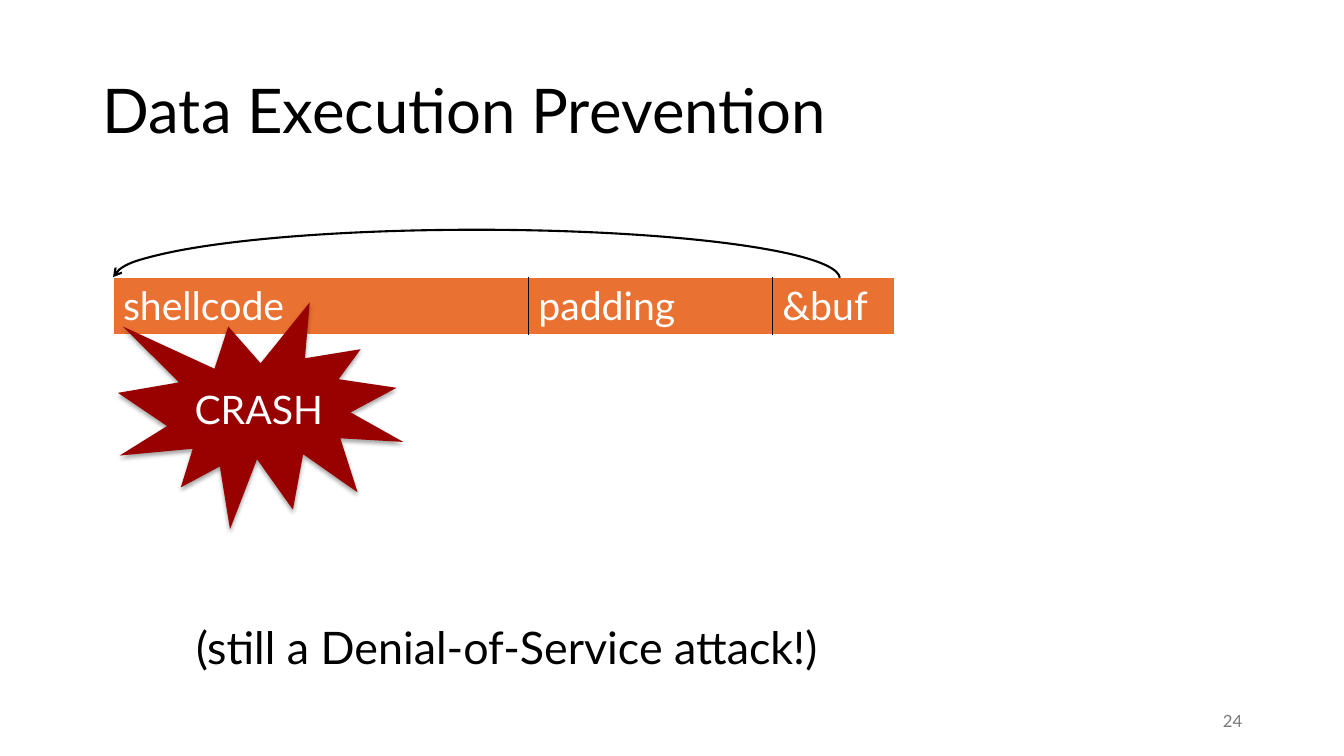
from dataclasses import dataclass

from lxml.etree import SubElement
from pptx import Presentation
from pptx.dml.color import RGBColor
from pptx.enum.shapes import MSO_SHAPE as Preset
from pptx.enum.text import MSO_ANCHOR as Anchor, PP_ALIGN as Align
from pptx.oxml import parse_xml
from pptx.oxml.ns import nsdecls, qn
from pptx.util import Inches, Pt


@dataclass(frozen=True)
class Theme:
    font: str = "Lato"
    ink: str = "000000"
    light: str = "FFFFFF"
    muted: str = "797979"
    buffer: str = "E97132"
    crash: str = "990000"
    title: int = 44
    note: int = 32
    label: int = 28
    number: int = 12


def apply_format(target, values):
    for name, value in values.items():
        setattr(target, name, value)


class SlideBuilder:
    def __init__(self, slide, theme):
        self.slide = slide
        self.theme = theme

    def fill_text(self, text_frame, text, size, color, **paragraph_format):
        paragraph = text_frame.paragraphs[0]
        apply_format(paragraph, paragraph_format)
        run = paragraph.add_run()
        run.text = text
        apply_format(run.font, {"name": self.theme.font, "size": Pt(size)})
        run.font.color.rgb = RGBColor.from_string(color)

    def text(self, box, text, size, color, frame_format, **paragraph_format):
        shape = self.slide.shapes.add_textbox(*map(Inches, box))
        apply_format(shape.text_frame, frame_format)
        self.fill_text(shape.text_frame, text, size, color, **paragraph_format)

    def buffer_table(self, box, labels, widths):
        table = self.slide.shapes.add_table(1, len(labels), *map(Inches, box)).table
        apply_format(table, {"first_row": False, "horz_banding": False})
        last = len(labels) - 1
        for index, (label, width) in enumerate(zip(labels, widths)):
            table.columns[index].width = Inches(width)
            cell = table.cell(0, index)
            cell.fill.solid()
            cell.fill.fore_color.rgb = RGBColor.from_string(self.theme.buffer)
            self.fill_text(cell.text_frame, label, self.theme.label, self.theme.light)
            if index < last:
                self.divider(cell, "lnR")
            if index > 0:
                self.divider(cell, "lnL")

    def divider(self, cell, side):
        border = parse_xml(
            f'<a:{side} {nsdecls("a")} w="{Pt(1)}"><a:solidFill>'
            f'<a:srgbClr val="{self.theme.ink}"/></a:solidFill></a:{side}>'
        )
        cell._tc.get_or_add_tcPr().insert(0, border)

    def jump_arc(self, box, angles):
        shape = self.slide.shapes.add_shape(Preset.ARC, *map(Inches, box))
        shape.shadow.inherit = False
        for index, angle in enumerate(angles):
            shape.adjustments[index] = angle
        shape.fill.background()
        shape.line.color.rgb = RGBColor.from_string(self.theme.ink)
        shape.line.width = Pt(1.5)
        properties = shape._element.spPr
        properties.find(qn("a:xfrm")).set("flipV", "1")
        SubElement(properties.find(qn("a:ln")), qn("a:tailEnd"), type="arrow")

    def burst(self, box, text):
        shape = self.slide.shapes.add_shape(Preset.EXPLOSION1, *map(Inches, box))
        shape.shadow.inherit = False
        shape.fill.solid()
        shape.fill.fore_color.rgb = RGBColor.from_string(self.theme.crash)
        shape.line.fill.background()
        effects = shape._element.spPr.find(qn("a:effectLst"))
        effects.append(parse_xml(
            f'<a:outerShdw {nsdecls("a")} blurRad="{Pt(3.1)}" dist="{Pt(1.8)}" '
            f'dir="5400000" rotWithShape="0"><a:srgbClr val="{self.theme.ink}">'
            '<a:alpha val="35000"/></a:srgbClr></a:outerShdw>'
        ))
        shape.text_frame.vertical_anchor = Anchor.MIDDLE
        self.fill_text(shape.text_frame, text, self.theme.label, self.theme.light,
                       alignment=Align.CENTER)


def main():
    presentation = Presentation()
    apply_format(presentation, {"slide_width": Inches(13.33), "slide_height": Inches(7.5)})
    theme = Theme()
    builder = SlideBuilder(presentation.slides.add_slide(presentation.slide_layouts[6]), theme)
    centered = {"word_wrap": True, "vertical_anchor": Anchor.MIDDLE}

    builder.text((0.92, 0.4, 11.5, 1.45), "Data Execution Prevention",
                 theme.title, theme.ink, centered, line_spacing=0.9)
    builder.text((9.42, 6.95, 3, 0.4), "24", theme.number, theme.muted, centered,
                 alignment=Align.RIGHT)
    builder.buffer_table((1.12, 2.75, 7.75, 0.57), ("shellcode", "padding", "&buf"),
                         (4.12, 2.42, 1.21))
    builder.jump_arc((1.12, 2.28, 7.21, 0.97), (0.08, 107.85))
    builder.text((1.8, 6.1, 6.41, 0.64), "(still a Denial-of-Service attack!)",
                 theme.note, theme.ink, {"word_wrap": False}, alignment=Align.RIGHT)
    builder.burst((1.17, 3, 2.83, 2.25), "CRASH")
    presentation.save("out.pptx")


if __name__ == "__main__":
    main()
